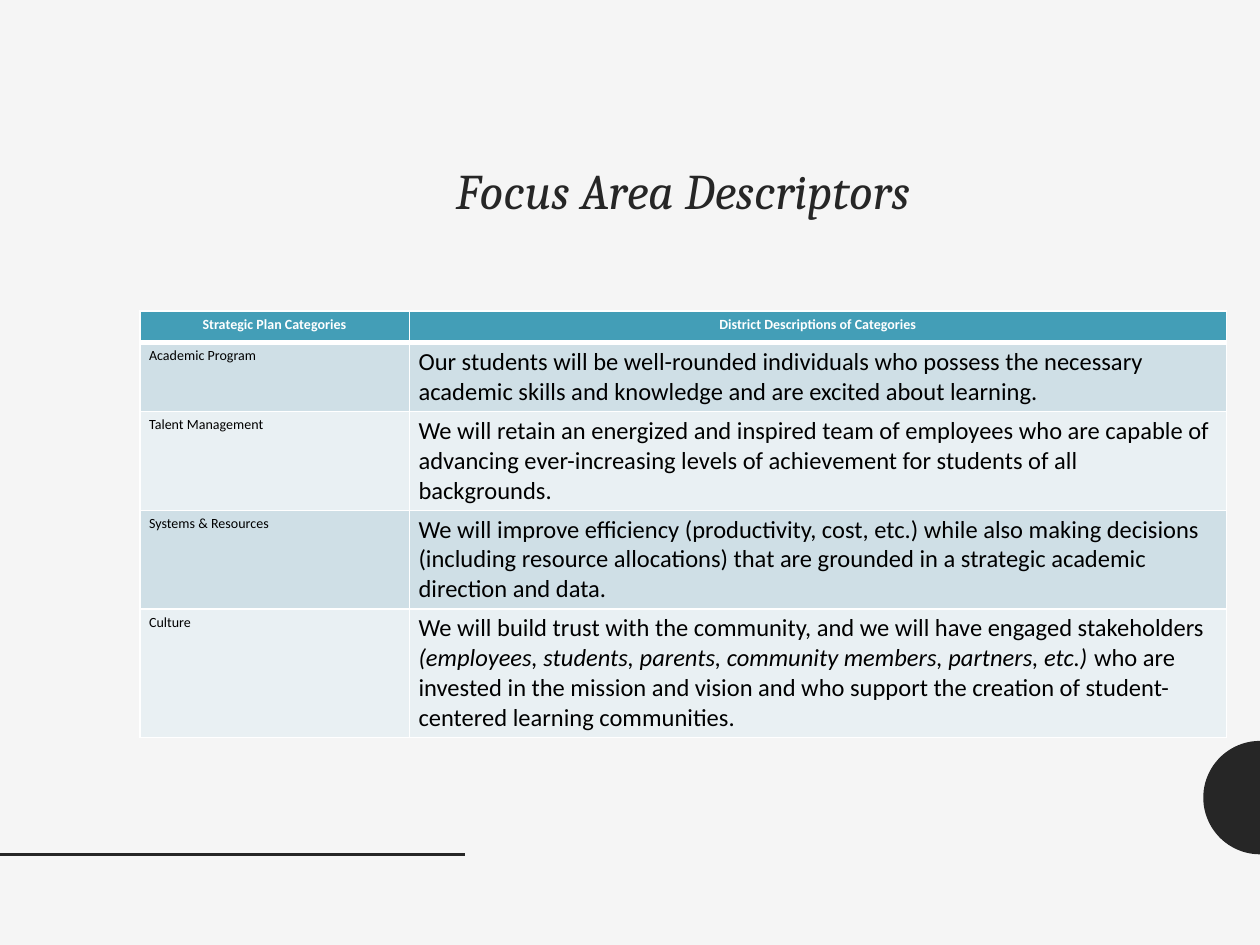
import math

import lxml.etree
import pptx
import pptx.dml.color
import pptx.enum.shapes
import pptx.enum.text
import pptx.oxml
import pptx.oxml.ns
import pptx.util

Pt = pptx.util.Pt
ALIGN = pptx.enum.text.PP_ALIGN
ANCHOR = pptx.enum.text.MSO_ANCHOR
COLORS = {
    "background": "F5F5F5",
    "ink": "262626",
    "header": "439EB7",
    "band_dark": "CFDFE6",
    "band_light": "E9F0F3",
    "white": "FFFFFF",
    "black": "000000",
}
HEADINGS = ["Strategic Plan Categories", "District Descriptions of Categories"]
FOCUS_AREAS = [
    ("Academic Program", [
        "Our students will be well-rounded individuals who possess the necessary",
        "academic skills and knowledge and are excited about learning.",
    ]),
    ("Talent Management", [
        "We will retain an energized and inspired team of employees who are capable of "
        "advancing ever-increasing levels of achievement for students of all backgrounds.",
    ]),
    ("Systems & Resources", [
        "We will improve efficiency (productivity, cost, etc.) while also making decisions "
        "(including resource allocations) that are grounded in a strategic academic "
        "direction and data.",
    ]),
    ("Culture", [
        "We will build trust with the community, and we will have engaged stakeholders",
        [("(employees, students, parents, community members, partners, etc.) ", True),
         ("who are invested in the mission and vision and who support the creation of "
          "student-centered learning communities.", False)],
    ]),
]


def rgb(color):
    return pptx.dml.color.RGBColor.from_string(COLORS[color])


def write_text(frame, paragraphs, font="Calibri", size=14, color="black", bold=False,
               italic=False, align=ALIGN.LEFT, line_spacing=None):
    for index, content in enumerate(paragraphs):
        paragraph = frame.paragraphs[0] if index == 0 else frame.add_paragraph()
        paragraph.alignment = align
        paragraph.line_spacing = line_spacing
        pieces = [(content, italic)] if isinstance(content, str) else content
        for words, slanted in pieces:
            run = paragraph.add_run()
            run.text = words
            run.font.name = font
            run.font.size = Pt(size)
            run.font.bold = bold
            run.font.italic = slanted
            run.font.color.rgb = rgb(color)


class Deck:
    def __init__(self, width, height):
        self.presentation = pptx.Presentation()
        self.presentation.slide_width = Pt(width)
        self.presentation.slide_height = Pt(height)
        self.slide = self.presentation.slides.add_slide(self.presentation.slide_layouts[6])
        background = self.slide.background.fill
        background.solid()
        background.fore_color.rgb = rgb("background")

    def half_disc(self, center_x, center_y, radius, color, steps=48):
        angles = [math.pi / 2 + math.pi * step / steps for step in range(steps + 1)]
        points = [(Pt(center_x + radius * math.cos(a)), Pt(center_y + radius * math.sin(a)))
                  for a in angles]
        builder = self.slide.shapes.build_freeform(*points[0])
        builder.add_line_segments(points[1:], close=True)
        disc = builder.convert_to_shape()
        disc.shadow.inherit = False
        disc.fill.solid()
        disc.fill.fore_color.rgb = rgb(color)
        disc.line.fill.background()

    def rule(self, x1, y1, x2, y2, color, weight):
        rule = self.slide.shapes.add_connector(
            pptx.enum.shapes.MSO_CONNECTOR.STRAIGHT, Pt(x1), Pt(y1), Pt(x2), Pt(y2))
        rule.line.color.rgb = rgb(color)
        rule.line.width = Pt(weight)
        lxml.etree.SubElement(rule._element.spPr, pptx.oxml.ns.qn("a:effectLst"))

    def text(self, left, top, width, height, paragraphs, **style):
        frame = self.slide.shapes.add_textbox(Pt(left), Pt(top), Pt(width), Pt(height)).text_frame
        frame.word_wrap = True
        frame.vertical_anchor = ANCHOR.TOP
        write_text(frame, paragraphs, **style)

    def cell(self, cell, paragraphs, fill, bottom=1, top=1, **style):
        cell.margin_left = cell.margin_right = Pt(5.3)
        cell.margin_top = cell.margin_bottom = Pt(2.65)
        cell.fill.solid()
        cell.fill.fore_color.rgb = rgb(fill)
        properties = cell._tc.get_or_add_tcPr()
        for index, (side, weight) in enumerate(zip("LRTB", (1, 1, top, bottom))):
            properties.insert(index, pptx.oxml.parse_xml(
                f'<a:ln{side} {pptx.oxml.ns.nsdecls("a")} w="{Pt(weight)}"><a:solidFill>'
                f'<a:srgbClr val="{COLORS["white"]}"/></a:solidFill></a:ln{side}>'))
        write_text(cell.text_frame, paragraphs, **style)

    def table(self, left, top, column_widths, row_heights, headings, rows):
        table = self.slide.shapes.add_table(
            len(row_heights), len(column_widths), Pt(left), Pt(top),
            Pt(sum(column_widths)), Pt(sum(row_heights))).table
        for column, width in zip(table.columns, column_widths):
            column.width = Pt(width)
        for row, height in zip(table.rows, row_heights):
            row.height = Pt(height)
        for column, heading in enumerate(headings):
            self.cell(table.cell(0, column), [heading], "header", bottom=3,
                      size=8, color="white", bold=True, align=ALIGN.CENTER)
        for row, (category, description) in enumerate(rows, 1):
            band = "band_dark" if row % 2 else "band_light"
            top_weight = 3 if row == 1 else 1
            self.cell(table.cell(row, 0), [category], band, top=top_weight, size=8)
            self.cell(table.cell(row, 1), description, band, top=top_weight)


def main():
    deck = Deck(720, 540)
    deck.half_disc(720, 455.8, 32.4, "ink")
    deck.rule(0, 488.2, 265.7, 488.2, "ink", 2)
    deck.table(79.9, 177.8, [154, 467], [18, 38, 38, 54, 70], HEADINGS, FOCUS_AREAS)
    deck.text(79.9, 91.4, 620.6, 46.8, ["Focus Area Descriptors"], font="Cambria",
              size=28.5, color="ink", italic=True, align=ALIGN.CENTER, line_spacing=0.9)
    deck.presentation.save("out.pptx")


if __name__ == "__main__":
    main()
